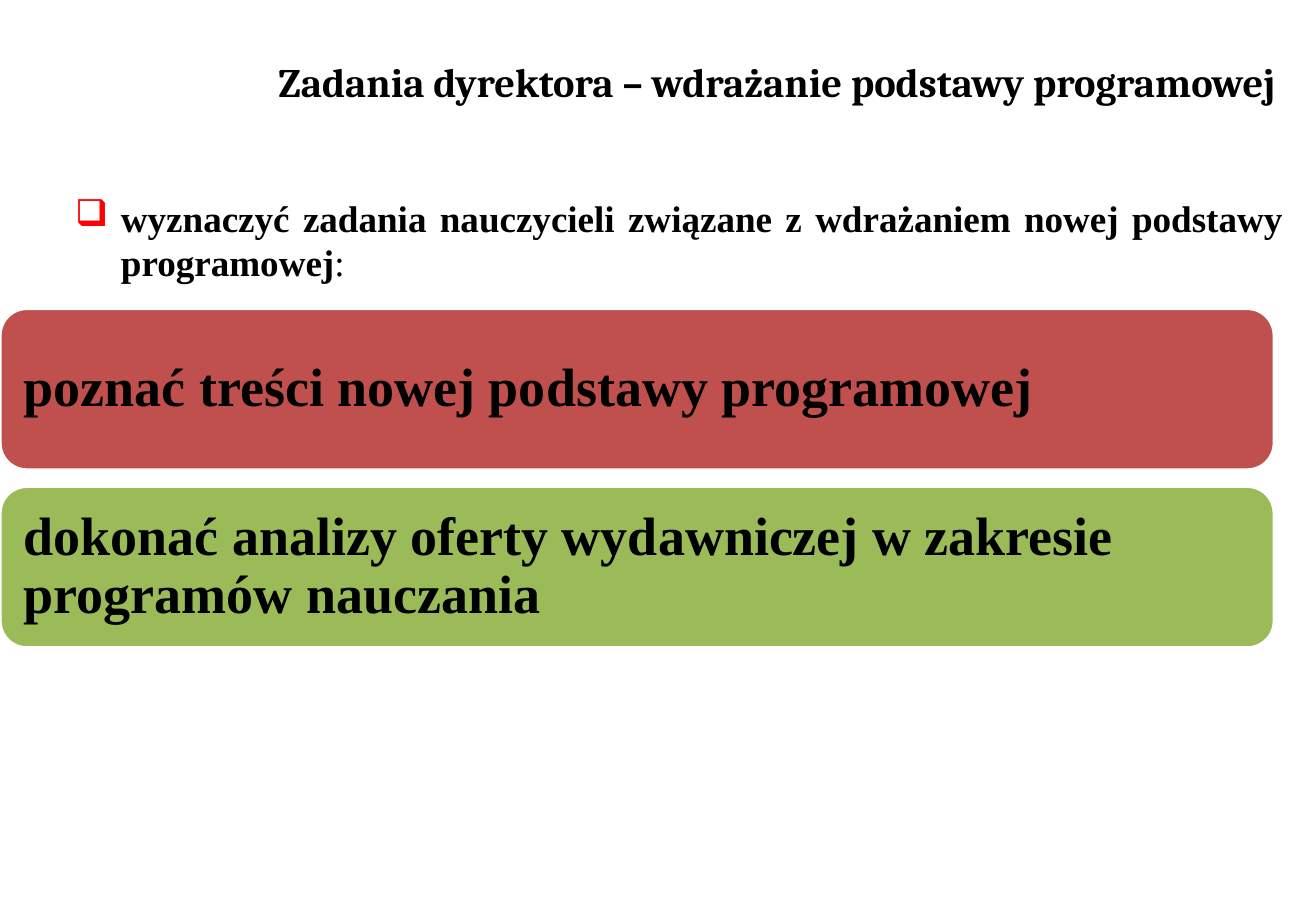
"""Build the slide on the head teacher's tasks for the new core curriculum."""

from typing import NamedTuple

from lxml.etree import SubElement
from pptx import Presentation
from pptx.dml.color import RGBColor
from pptx.enum.shapes import MSO_SHAPE as Shape
from pptx.enum.text import MSO_ANCHOR as Anchor, PP_ALIGN as Align
from pptx.oxml.ns import qn
from pptx.slide import Slide
from pptx.text.text import TextFrame, _Paragraph as Paragraph
from pptx.util import Cm, Pt

BLACK = RGBColor(0x00, 0x00, 0x00)
WHITE = RGBColor(0xFF, 0xFF, 0xFF)
RED = RGBColor(0xFF, 0x00, 0x00)
BRICK = RGBColor(0xC0, 0x50, 0x4D)
GREEN = RGBColor(0x9B, 0xBB, 0x59)

HEADING_FONT = "Cambria"
BODY_FONT = "Times New Roman"

CARD_TOP = 6.45
CARD_WIDTH = 26.64
CARD_HEIGHT = 3.38
CARD_STEP = 3.72


class Task(NamedTuple):
    text: str
    fill: RGBColor


TASKS = [
    Task("poznać treści nowej podstawy programowej", BRICK),
    Task("dokonać analizy oferty wydawniczej w zakresie programów nauczania", GREEN),
]


def style(paragraph: Paragraph, font_name: str, size: float) -> None:
    paragraph.font.name = font_name
    paragraph.font.size = Pt(size)
    paragraph.font.color.rgb = BLACK


def add_text_box(page: Slide, left: float, top: float, width: float, height: float) -> TextFrame:
    box = page.shapes.add_textbox(Cm(left), Cm(top), Cm(width), Cm(height))
    box.text_frame.word_wrap = True
    return box.text_frame


def add_bullet(paragraph: Paragraph, symbol: str, color: RGBColor) -> None:
    properties = paragraph._p.get_or_add_pPr()
    properties.set("marL", str(Cm(1.85)))
    properties.set("indent", str(Cm(-0.96)))
    bullet_color = SubElement(properties, qn("a:buClr"))
    SubElement(bullet_color, qn("a:srgbClr"), val=str(color))
    SubElement(properties, qn("a:buChar"), char=symbol)


def add_title(page: Slide) -> None:
    frame = add_text_box(page, 5.38, 0.41, 21.72, 2.59)
    frame.vertical_anchor = Anchor.MIDDLE
    para = frame.paragraphs[0]
    para.text = "Zadania dyrektora – wdrażanie podstawy programowej"
    para.alignment = Align.CENTER
    style(para, HEADING_FONT, 24)
    para.font.bold = True


def add_introduction(page: Slide) -> None:
    para = add_text_box(page, 0.43, 3.96, 26.64, 2.3).paragraphs[0]
    para.alignment = Align.JUSTIFY
    add_bullet(para, "❑", RED)
    style(para, BODY_FONT, 22)
    span = para.add_run()
    span.text = "wyznaczyć zadania nauczycieli związane z wdrażaniem nowej podstawy programowej"
    span.font.bold = True
    para.add_run().text = ":"


def add_card(page: Slide, task: Task, top: float) -> None:
    card = page.shapes.add_shape(
        Shape.ROUNDED_RECTANGLE, Cm(0), Cm(top), Cm(CARD_WIDTH), Cm(CARD_HEIGHT)
    )
    card.shadow.inherit = False
    card.fill.solid()
    card.fill.fore_color.rgb = task.fill
    card.line.color.rgb = WHITE
    card.line.width = Pt(2)
    frame = card.text_frame
    frame.word_wrap = True
    frame.vertical_anchor = Anchor.MIDDLE
    frame.margin_left = frame.margin_right = Cm(0.33)
    para = frame.paragraphs[0]
    para.text = task.text
    para.alignment = Align.LEFT
    para.line_spacing = 0.9
    style(para, BODY_FONT, 32)
    para.font.bold = True


def main() -> None:
    deck = Presentation()
    deck.slide_width, deck.slide_height = Cm(27.51), Cm(19.05)
    page = deck.slides.add_slide(deck.slide_layouts[6])
    add_title(page)
    add_introduction(page)
    for index, task in enumerate(TASKS):
        add_card(page, task, CARD_TOP + index * CARD_STEP)
    deck.save("out.pptx")


if __name__ == "__main__":
    main()
